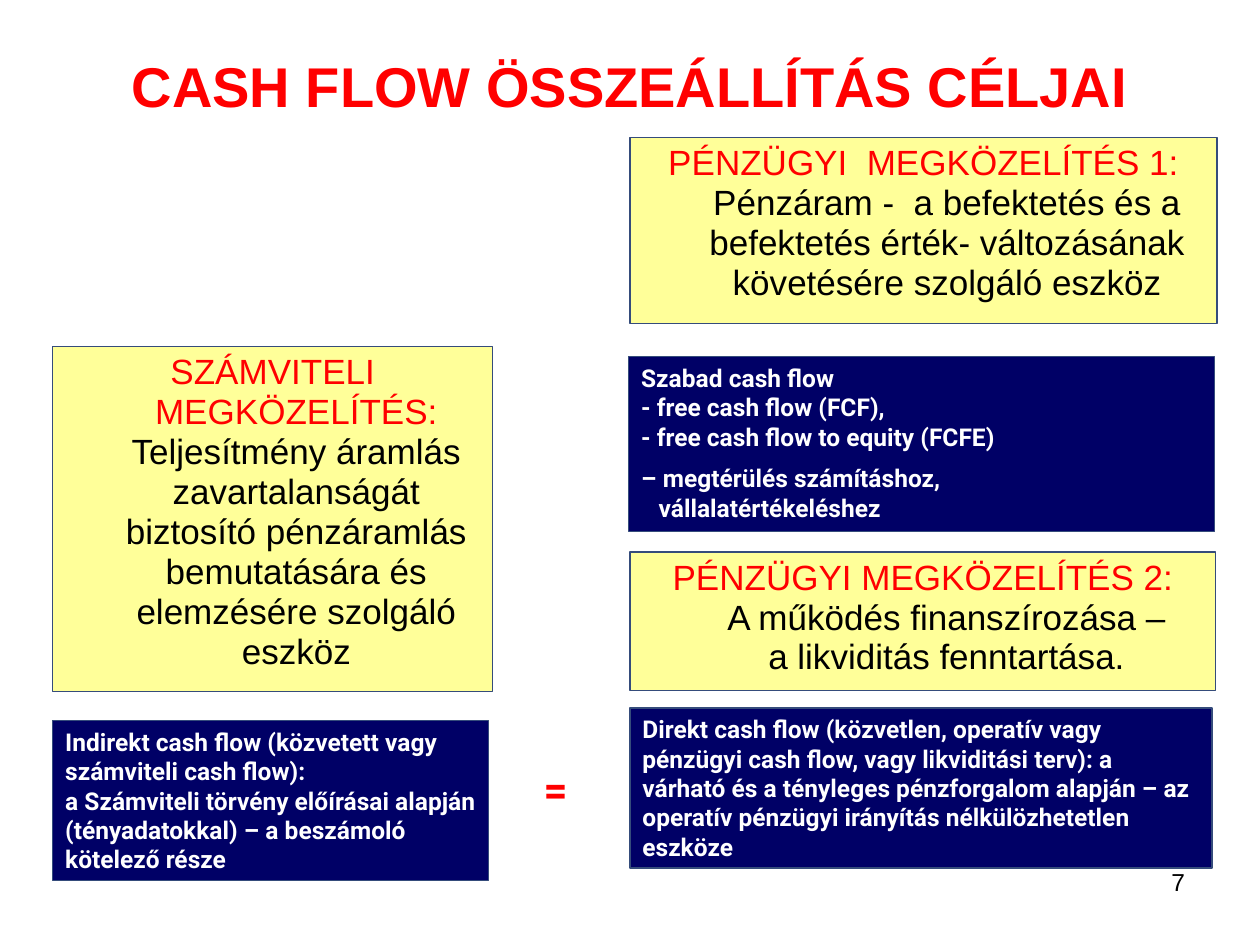
import dataclasses

import pptx
import pptx.dml.color
import pptx.enum.shapes
import pptx.enum.text
import pptx.util

Pt = pptx.util.Pt
RGB = pptx.dml.color.RGBColor.from_string
Align = pptx.enum.text.PP_ALIGN
Anchor = pptx.enum.text.MSO_ANCHOR


@dataclasses.dataclass(frozen=True)
class Theme:
    red: str = "FF0000"
    black: str = "000000"
    white: str = "FFFFFF"
    yellow: str = "FFFF99"
    navy: str = "000066"
    outline: str = "354C7B"
    body_font: str = "Arial"
    accent_font: str = "Roboto"
    title_size: float = 32
    equals_size: float = 24
    approach_size: float = 20
    detail_size: float = 14


THEME = Theme()


def apply(target, values):
    for name, value in values.items():
        setattr(target, name, value)


def add_lines(paragraph, text, font_name, size, color, bold=False):
    """Add runs to the paragraph, with a line break at each newline."""
    for index, line in enumerate(text.split("\n")):
        if index:
            paragraph.add_line_break()
        run = paragraph.add_run()
        run.text = line
        apply(run.font, {"name": font_name, "size": Pt(size), "bold": bold})
        run.font.color.rgb = RGB(color)


def set_hanging(paragraph, indent):
    properties = paragraph._p.get_or_add_pPr()
    properties.set("marL", str(Pt(indent)))
    properties.set("indent", str(-Pt(indent)))


def prepare_frame(shape, anchor=Anchor.TOP):
    frame = shape.text_frame
    apply(frame, {
        "word_wrap": True, "vertical_anchor": anchor,
        "margin_left": Pt(7.2), "margin_right": Pt(7.2),
        "margin_top": Pt(3.6), "margin_bottom": Pt(3.6),
    })
    return frame


def add_panel(slide, box, fill):
    shape = slide.shapes.add_shape(
        pptx.enum.shapes.MSO_SHAPE.RECTANGLE, *map(Pt, box))
    shape.shadow.inherit = False
    shape.fill.solid()
    shape.fill.fore_color.rgb = RGB(fill)
    shape.line.color.rgb = RGB(THEME.outline)
    shape.line.width = Pt(0.75)
    return prepare_frame(shape)


def add_title(slide, box, text):
    title = slide.shapes.title
    apply(title, dict(zip(("left", "top", "width", "height"), map(Pt, box))))
    paragraph = prepare_frame(title, Anchor.MIDDLE).paragraphs[0]
    paragraph.alignment = Align.CENTER
    add_lines(paragraph, text, THEME.body_font, THEME.title_size, THEME.red, True)


def add_approach(slide, box, heading, description):
    """Yellow panel: red heading over a black description."""
    paragraph = add_panel(slide, box, THEME.yellow).paragraphs[0]
    apply(paragraph, {"alignment": Align.CENTER, "line_spacing": 0.95,
                      "space_before": Pt(4)})
    set_hanging(paragraph, 27)
    for text, color in ((heading + "\n", THEME.red), (description, THEME.black)):
        add_lines(paragraph, text, THEME.body_font, THEME.approach_size, color)


def add_detail(slide, box, texts):
    """Navy panel: bold white paragraphs, those after the first hanging."""
    frame = add_panel(slide, box, THEME.navy)
    for index, text in enumerate(texts):
        paragraph = frame.add_paragraph() if index else frame.paragraphs[0]
        apply(paragraph, {"alignment": Align.LEFT, "space_before": Pt(7)})
        if index:
            set_hanging(paragraph, 10)
        add_lines(paragraph, text, THEME.accent_font, THEME.detail_size,
                  THEME.white, True)


def add_label(slide, box, text, alignment, **style):
    frame = prepare_frame(slide.shapes.add_textbox(*map(Pt, box)))
    paragraph = frame.paragraphs[0]
    paragraph.alignment = alignment
    add_lines(paragraph, text, **style)


def main():
    presentation = pptx.Presentation()
    presentation.slide_width, presentation.slide_height = Pt(720), Pt(540)
    slide = presentation.slides.add_slide(presentation.slide_layouts[5])

    add_title(slide, (36, 3.6, 648, 90), "CASH FLOW ÖSSZEÁLLÍTÁS CÉLJAI")

    # Left column: accounting approach
    left = 30.2
    add_approach(
        slide, (left, 198, 251.3, 197.3), "SZÁMVITELI MEGKÖZELÍTÉS:",
        "Teljesítmény áramlás zavartalanságát biztosító pénzáramlás "
        "bemutatására és elemzésére szolgáló eszköz")
    add_detail(slide, (left, 411.8, 249.1, 91.4), [
        "Indirekt cash flow (közvetett vagy számviteli cash flow):\n"
        "a Számviteli törvény előírásai alapján (tényadatokkal) – "
        "a beszámoló kötelező része"])

    # Right column: financial approaches
    right = 360
    add_approach(
        slide, (right, 78.5, 335.5, 106.5), "PÉNZÜGYI  MEGKÖZELÍTÉS 1:",
        "Pénzáram -  a befektetés és a befektetés érték- változásának "
        "követésére szolgáló eszköz")
    add_detail(slide, (359.3, 203.8, 334.8, 100), [
        "Szabad cash flow\n- free cash flow (FCF),\n"
        "- free cash flow to equity (FCFE)",
        "– megtérülés számításhoz,\nvállalatértékeléshez"])
    add_approach(
        slide, (right, 315.4, 334.8, 79.2), "PÉNZÜGYI MEGKÖZELÍTÉS 2:",
        "A működés finanszírozása –\na likviditás fenntartása.")
    add_detail(slide, (right, 404.6, 332.6, 91.4), [
        "Direkt cash flow (közvetlen, operatív vagy pénzügyi cash flow, "
        "vagy likviditási terv): a várható és a tényleges pénzforgalom "
        "alapján – az operatív pénzügyi irányítás nélkülözhetetlen eszköze"])

    # Equals sign between the columns, and the page number
    add_label(slide, (280.8, 432.7, 73.4, 36), "=", Align.CENTER,
              font_name=THEME.accent_font, size=THEME.equals_size,
              color=THEME.red, bold=True)
    add_label(slide, (516.2, 491.8, 168, 37.4), "7", Align.RIGHT,
              font_name=THEME.body_font, size=THEME.detail_size,
              color=THEME.black)

    presentation.save("out.pptx")


if __name__ == "__main__":
    main()
